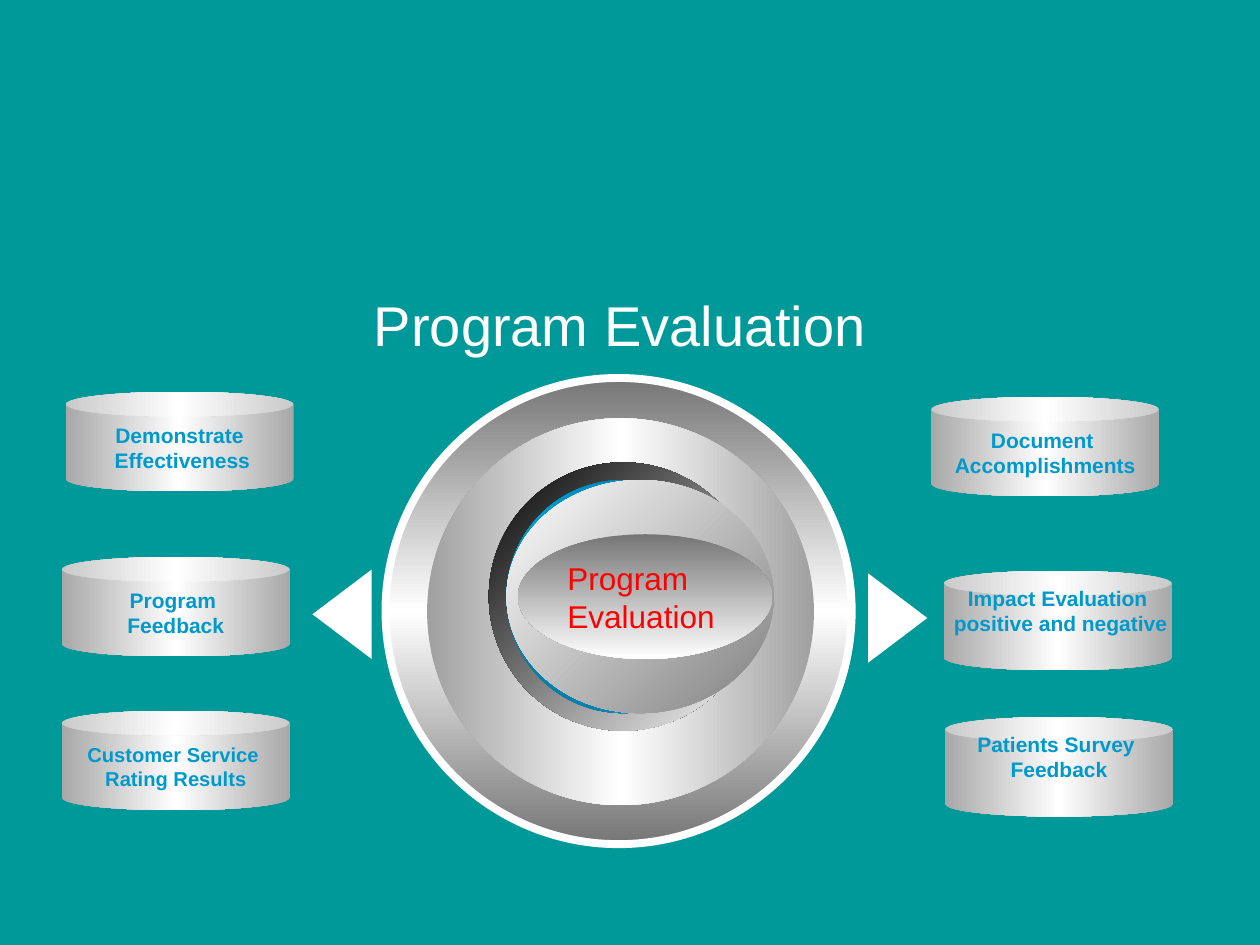
import pptx
import pptx.util
import pptx.dml.color
import pptx.enum.shapes
import pptx.enum.text
import pptx.oxml
import pptx.oxml.ns

Inches = pptx.util.Inches
RGBColor = pptx.dml.color.RGBColor
SHAPES = pptx.enum.shapes.MSO_SHAPE
ANCHOR = pptx.enum.text.MSO_ANCHOR
ALIGN = pptx.enum.text.PP_ALIGN

TEAL = RGBColor(0x00, 0x99, 0x99)
WHITE = RGBColor(0xFF, 0xFF, 0xFF)
BLACK = RGBColor(0x00, 0x00, 0x00)
RED = RGBColor(0xFF, 0x00, 0x00)
BLUE = RGBColor(0x00, 0x99, 0xCC)
DARK_BLUE = RGBColor(0x00, 0x75, 0x9C)
DARK_GRAY = RGBColor(0x76, 0x76, 0x76)
MID_GRAY = RGBColor(0x80, 0x80, 0x80)
RING_GRAY = RGBColor(0xA0, 0xA0, 0xA0)
CAN_GRAY = RGBColor(0xA8, 0xA8, 0xA8)

# Content
TITLE = "Program Evaluation"
CENTRE_TEXT = "Program Evaluation"

# Left, top, rotation
ARROWS = [(2.36, 4.64, 270), (6.77, 4.67, 90)]
ARROW_SIZE = (0.71, 0.47)

# Left, top, width, height, evenly spaced gradient colours, angle
DISCS = [
    (3.06, 3.0, 3.7, 3.7, (DARK_GRAY, WHITE, DARK_GRAY), 90),
    (3.39, 3.32, 3.07, 3.07, (RING_GRAY, WHITE, RING_GRAY), 0),
    (3.88, 3.67, 2.13, 2.13, (BLACK, WHITE), 45),
    (4.02, 3.81, 1.85, 1.85, (DARK_BLUE, BLUE, DARK_BLUE), 315),
    (4.02, 3.81, 2.12, 1.85, (WHITE, MID_GRAY), 45),
    (4.11, 4.24, 2.02, 0.99, (DARK_GRAY, WHITE), 90),
]

# Left, top, lines, text size, bottom inset
CANS = [
    (0.52, 3.11, ["Demonstrate", " Effectiveness"], 12, 0.05),
    (7.5, 5.69, ["Patients Survey ", "Feedback"], 12, 0.31),
    (7.49, 4.53, ["Impact Evaluation", " positive and negative"], 12, 0.31),
    (7.39, 3.15, ["Document ", "Accomplishments"], 12, 0.05),
    (0.49, 4.42, ["Program ", "Feedback"], 12, 0.05),
    (0.49, 5.64, ["Customer Service ", "Rating Results"], 11.5, 0.05),
]
CAN_SIZE = (1.81, 0.79)


def add_shape(kind, left, top, width, height):
    shape = slide.shapes.add_shape(kind, *map(Inches, (left, top, width, height)))
    shape.shadow.inherit = False
    shape.line.fill.background()
    return shape


def set_gradient(shape, colors, angle):
    last = len(colors) - 1
    stops = "".join(
        f'<a:gs pos="{100000 * index // last}"><a:srgbClr val="{color}"/></a:gs>'
        for index, color in enumerate(colors))
    gradient = pptx.oxml.parse_xml(
        f'<a:gradFill {pptx.oxml.ns.nsdecls("a")} rotWithShape="1">'
        f'<a:gsLst>{stops}</a:gsLst>'
        f'<a:lin ang="{angle * 60000}" scaled="0"/></a:gradFill>')
    shape.fill.background()
    properties = shape._element.spPr
    no_fill = properties.find(pptx.oxml.ns.qn("a:noFill"))
    properties.replace(no_fill, gradient)


def write_lines(shape, lines, size, color, bold=False, align=ALIGN.LEFT,
                **frame_format):
    frame = shape.text_frame
    for name, value in frame_format.items():
        setattr(frame, name, value)
    font_format = {"name": "Arial", "size": pptx.util.Pt(size), "bold": bold}
    for index, line in enumerate(lines):
        paragraph = frame.add_paragraph() if index else frame.paragraphs[0]
        paragraph.alignment = align
        run = paragraph.add_run()
        run.text = line
        for name, value in font_format.items():
            setattr(run.font, name, value)
        run.font.color.rgb = color


presentation = pptx.Presentation()
presentation.slide_width = Inches(10)
presentation.slide_height = Inches(7.5)
slide = presentation.slides.add_slide(presentation.slide_layouts[6])
slide.background.fill.solid()
slide.background.fill.fore_color.rgb = TEAL

# Side arrows, all head
for left, top, rotation in ARROWS:
    arrow = add_shape(SHAPES.UP_ARROW, left, top, *ARROW_SIZE)
    arrow.adjustments[0] = 0.52
    arrow.adjustments[1] = 1
    arrow.rotation = rotation
    arrow.fill.solid()
    arrow.fill.fore_color.rgb = WHITE

# Central dial, from the rim inwards
discs = []
for *place, colors, angle in DISCS:
    disc = add_shape(SHAPES.OVAL, *place)
    set_gradient(disc, colors, angle)
    discs.append(disc)
rim, centre = discs[0], discs[-1]
rim.line.color.rgb = WHITE
rim.line.width = pptx.util.Pt(4.5)
write_lines(centre, [CENTRE_TEXT], 18, RED,
            word_wrap=True, vertical_anchor=ANCHOR.MIDDLE)

# Labelled cans
for left, top, lines, size, bottom_inset in CANS:
    can = add_shape(SHAPES.CAN, left, top, *CAN_SIZE)
    set_gradient(can, (CAN_GRAY, WHITE, CAN_GRAY), 0)
    write_lines(can, lines, size, BLUE, bold=True, align=ALIGN.CENTER,
                word_wrap=False, vertical_anchor=ANCHOR.MIDDLE,
                margin_bottom=Inches(bottom_inset))

# Title
title = slide.shapes.add_textbox(*map(Inches, (2.87, 2.26, 4.13, 0.64)))
write_lines(title, [TITLE], 32, WHITE, word_wrap=True)

presentation.save("out.pptx")
